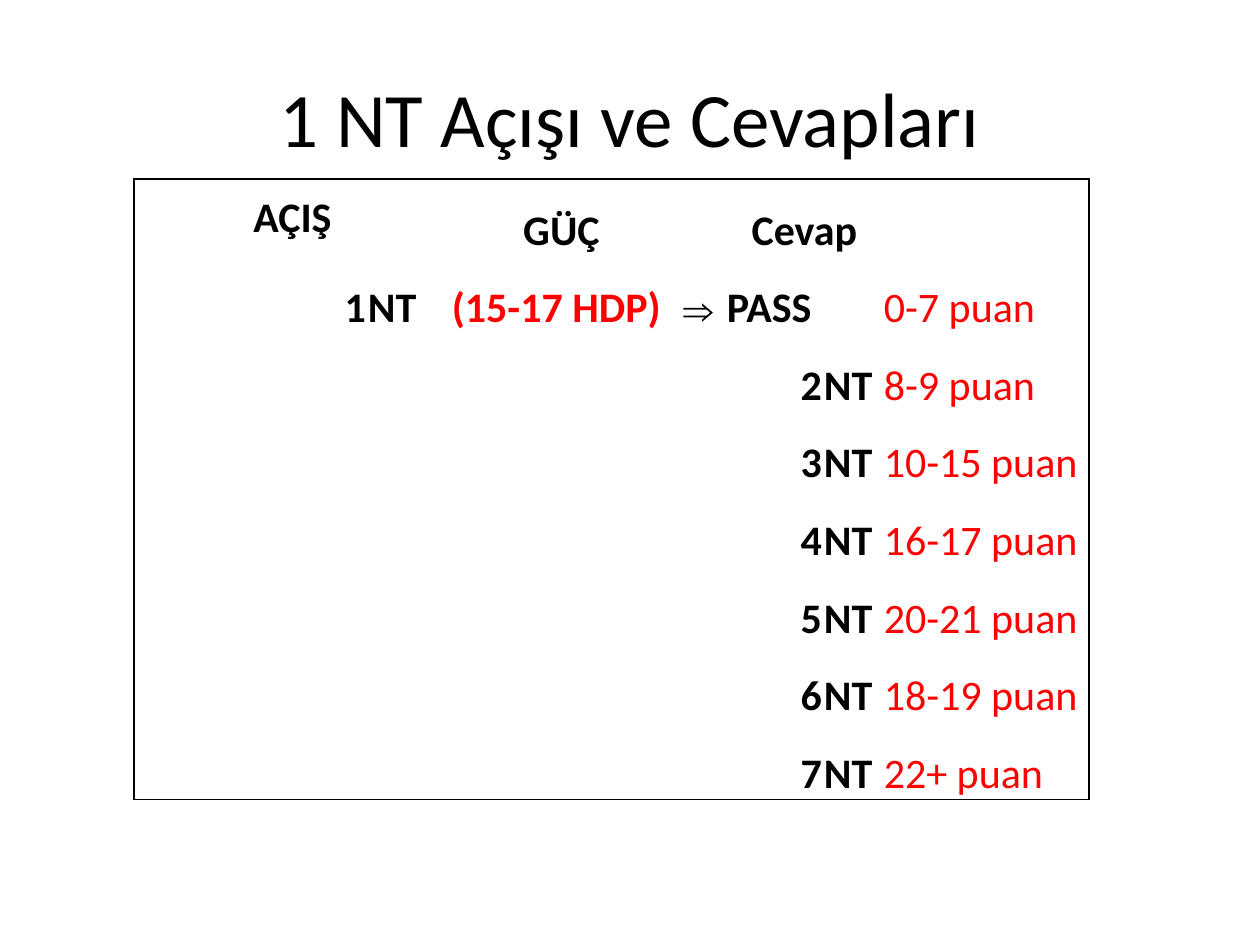
from dataclasses import dataclass

from lxml import etree
from pptx import Presentation
from pptx.dml.color import RGBColor
from pptx.enum.text import MSO_ANCHOR, PP_ALIGN
from pptx.oxml.ns import qn
from pptx.util import Emu, Pt

LEFT, CENTER, RIGHT = PP_ALIGN.LEFT, PP_ALIGN.CENTER, PP_ALIGN.RIGHT
MIDDLE, BOTTOM = MSO_ANCHOR.MIDDLE, MSO_ANCHOR.BOTTOM
COLORS = {"ink": "000000", "points": "FF0000"}
COL_WIDTHS = [233, 84, 221, 54, 97, 60, 206]
ROW_COUNT = 8
TABLE_HEIGHT = 621


@dataclass
class Entry:
    row: int
    col: int
    text: str
    align: PP_ALIGN = LEFT
    color: str = "ink"
    bold: bool = True
    font: str = "Calibri"
    anchor: MSO_ANCHOR = BOTTOM
    span: int = 1


def px(n: int) -> Emu:
    return Emu(round(n * 914400 / 126))


def write(tf, text: str, *, size: int = 24, font: str = "Calibri",
          color: str = "ink", bold: bool = False, align: PP_ALIGN = LEFT) -> None:
    p = tf.paragraphs[0]
    p.alignment = align
    r = p.add_run()
    r.text = text
    r.font.size = Pt(size)
    r.font.name = font
    r.font.bold = bold
    r.font.color.rgb = RGBColor.from_string(COLORS[color])


def set_borders(cell, sides: dict[str, bool]) -> None:
    tc_pr = cell._tc.get_or_add_tcPr()
    for i, (side, visible) in enumerate(sides.items()):
        ln = etree.Element(qn(f"a:ln{side}"), w=str(Pt(1)))
        if visible:
            fill = etree.SubElement(ln, qn("a:solidFill"))
            etree.SubElement(fill, qn("a:srgbClr"), val=COLORS["ink"])
        else:
            etree.SubElement(ln, qn("a:noFill"))
        tc_pr.insert(i, ln)


def add_grid(s):
    cols = len(COL_WIDTHS)
    table = s.shapes.add_table(ROW_COUNT, cols, px(134), px(179),
                               px(sum(COL_WIDTHS)), px(TABLE_HEIGHT)).table
    table.first_row = False
    table.horz_banding = False
    for col, width in zip(table.columns, COL_WIDTHS):
        col.width = px(width)
    for y in range(ROW_COUNT):
        for x in range(cols):
            cell = table.cell(y, x)
            cell.margin_left = cell.margin_right = cell.margin_top = px(1)
            cell.margin_bottom = 0
            cell.fill.background()
            set_borders(cell, {"L": x == 0, "R": x == cols - 1,
                               "T": y == 0, "B": y == ROW_COUNT - 1})
    return table


def fill_cell(table, entry: Entry) -> None:
    cell = table.cell(entry.row, entry.col)
    if entry.span > 1:
        cell.merge(table.cell(entry.row, entry.col + entry.span - 1))
    cell.vertical_anchor = entry.anchor
    write(cell.text_frame, entry.text, font=entry.font, color=entry.color,
          bold=entry.bold, align=entry.align)


def build_entries() -> list[Entry]:
    entries = [
        Entry(0, 0, "AÇIŞ", CENTER, anchor=MIDDLE, span=2),
        Entry(0, 2, "GÜÇ", CENTER),
        Entry(0, 4, "Cevap", CENTER, span=2),
        Entry(1, 0, "1", RIGHT),
        Entry(1, 1, "NT"),
        Entry(1, 2, "(15-17 HDP)", color="points"),
        Entry(1, 3, "⇒", CENTER, font="Arial"),
        Entry(1, 4, "PASS"),
    ]
    ranges = ["0-7", "8-9", "10-15", "16-17", "20-21", "18-19", "22+"]
    for row, points in enumerate(ranges, start=1):
        if row > 1:
            entries += [Entry(row, 4, str(row), RIGHT), Entry(row, 5, "NT")]
        entries.append(Entry(row, 6, f"{points} puan", color="points", bold=False))
    return entries


def main() -> None:
    prs = Presentation()
    prs.slide_width, prs.slide_height = px(1260), px(945)
    s = prs.slides.add_slide(prs.slide_layouts[5])
    title = s.shapes.title
    title.left, title.top, title.width, title.height = map(px, (63, 38, 1134, 157))
    title.text_frame.vertical_anchor = MIDDLE
    write(title.text_frame, "1 NT Açışı ve Cevapları", size=44, align=CENTER)
    table = add_grid(s)
    for row in table.rows:
        row.height = px(TABLE_HEIGHT) // ROW_COUNT
    for entry in build_entries():
        fill_cell(table, entry)
    prs.save("out.pptx")


if __name__ == "__main__":
    main()
